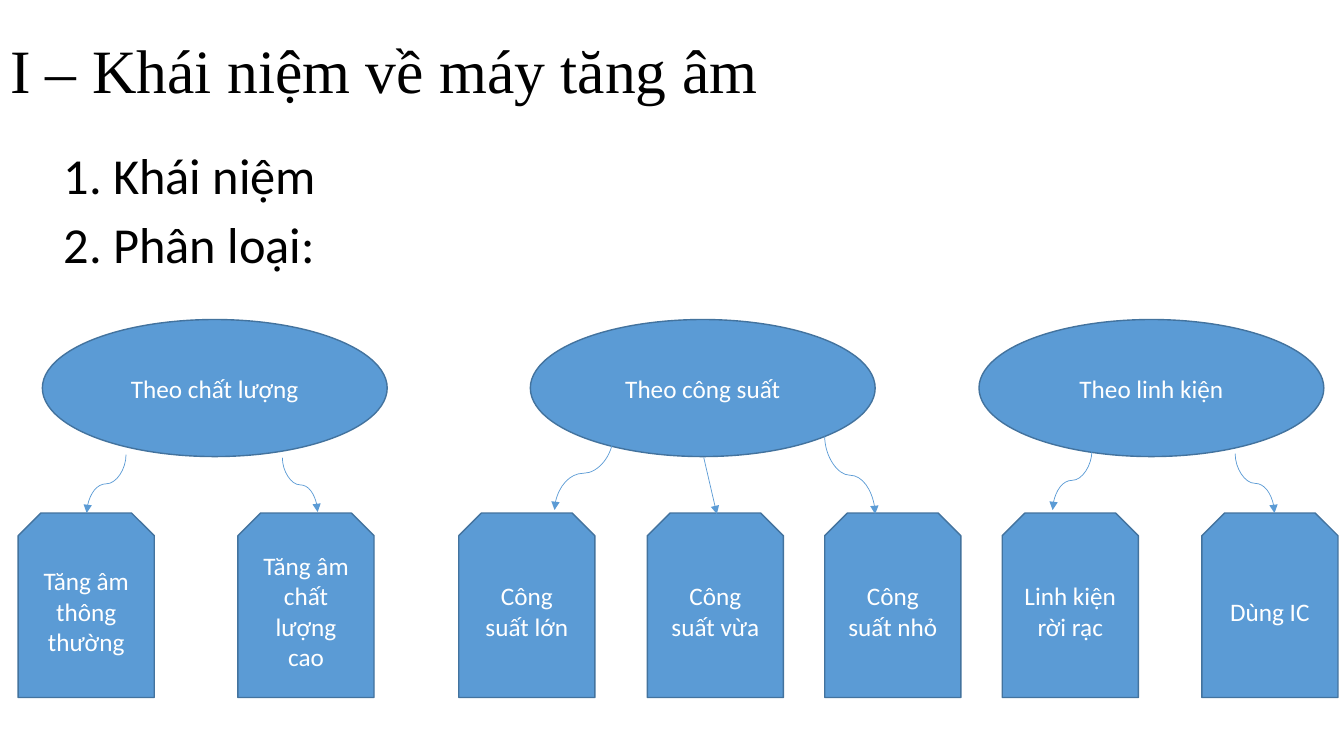
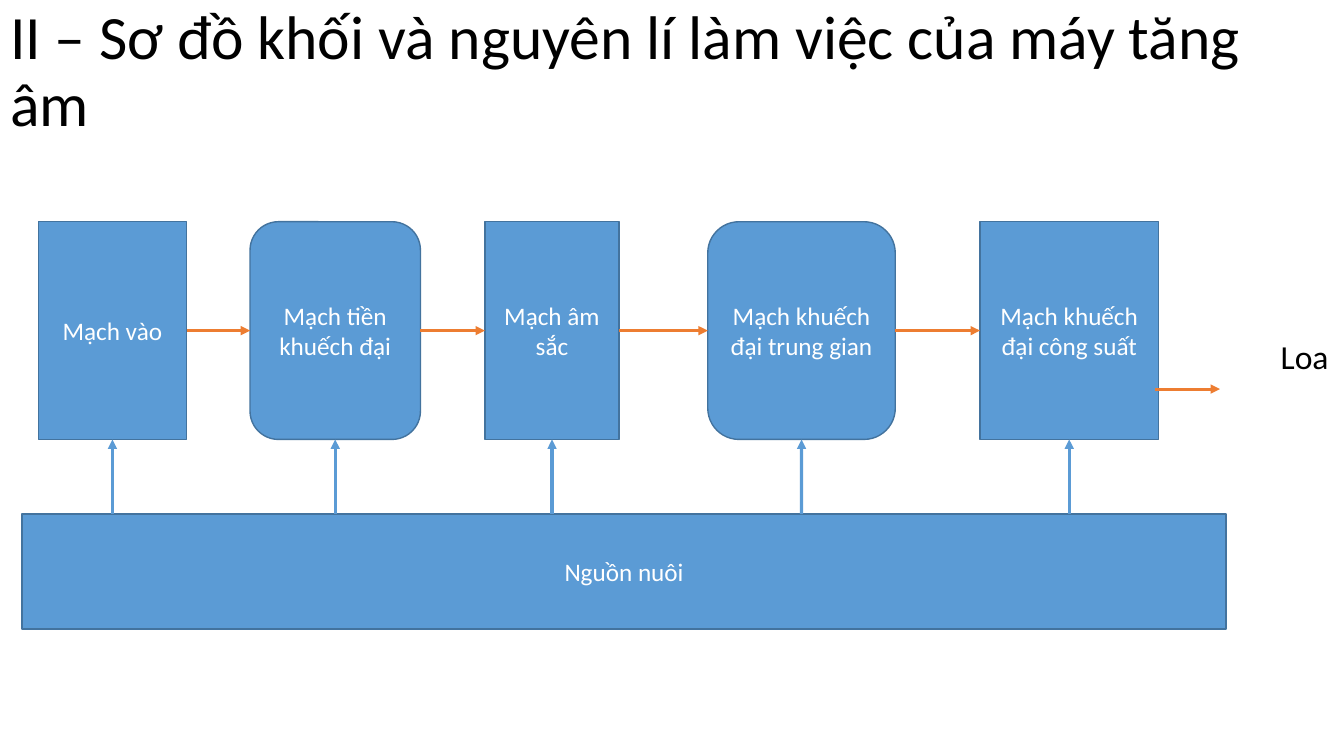
from lxml.etree import SubElement
from pptx import Presentation
from pptx.dml.color import RGBColor
from pptx.enum.shapes import MSO_CONNECTOR as LINK, MSO_SHAPE as SHAPE
from pptx.enum.text import MSO_ANCHOR as ANCHOR, MSO_AUTO_SIZE as AUTO, PP_ALIGN as ALIGN
from pptx.oxml.ns import qn
from pptx.util import Inches, Pt

WIDTH, HEIGHT = 13.33, 7.5
BLUE, EDGE, ORANGE, BLACK, WHITE = "5B9BD5", "43739E", "ED7D31", "000000", "FFFFFF"
SANS, SERIF = "Calibri", "Times New Roman"

KINDS_TITLE = "I – Khái niệm về máy tăng âm"
KINDS_LIST = ["1. Khái niệm", "2. Phân loại:"]
TOPIC_TOP, TOPIC_WIDTH, TOPIC_HEIGHT = 3.17, 3.42, 1.36
LEAF_TOP, LEAF_WIDTH, LEAF_HEIGHT = 5.09, 1.35, 1.83
TOPICS = [
    ("Theo chất lượng", 0.42, [
        ("Tăng âm thông thường", 0.18, (1.25, 4.51), (0.86, 5.09)),
        ("Tăng âm chất lượng cao", 2.36, (2.8, 4.54), (3.15, 5.08))]),
    ("Theo công suất", 5.26, [
        ("Công suất lớn", 4.55, (6.08, 4.33), (5.5, 5.06)),
        ("Công suất vừa", 6.42, (6.98, 4.54), (7.11, 5.1)),
        ("Công suất nhỏ", 8.18, (8.18, 4.33), (8.68, 5.1))]),
    ("Theo linh kiện", 9.71, [
        ("Linh kiện rời rạc", 9.94, (10.83, 4.47), (10.44, 5.06)),
        ("Dùng IC", 11.92, (12.25, 4.5), (12.64, 5.09))]),
]
STRAIGHT_LEAF = "Công suất vừa"

CIRCUIT_TITLE = "II – Sơ đồ khối và nguyên lí làm việc của máy tăng âm"
STAGE_TOP, STAGE_HEIGHT = 2.2, 2.16
STAGES = [
    ("Mạch vào", SHAPE.RECTANGLE, 0.38, 1.47),
    ("Mạch tiền khuếch đại", SHAPE.ROUNDED_RECTANGLE, 2.48, 1.69),
    ("Mạch âm sắc", SHAPE.RECTANGLE, 4.81, 1.33),
    ("Mạch khuếch đại trung gian", SHAPE.ROUNDED_RECTANGLE, 7.02, 1.86),
    ("Mạch khuếch đại công suất", SHAPE.RECTANGLE, 9.72, 1.77),
]
SUPPLY, SUPPLY_TOP = "Nguồn nuôi", 5.1
SPEAKER = "Loa"


def color(value):
    return RGBColor.from_string(value)


def style(para, size, ink, font=SANS, align=ALIGN.LEFT):
    para.alignment = align
    para.font.size = Pt(size)
    para.font.name = font
    para.font.color.rgb = color(ink)


def place(shape, left, top, width, height):
    shape.left, shape.top = Inches(left), Inches(top)
    shape.width, shape.height = Inches(width), Inches(height)


def add_title(page, text, width, font=SANS):
    title = page.shapes.title
    place(title, 0, 0, width, 1.45)
    frame = title.text_frame
    frame.text = text
    frame.auto_size = AUTO.NONE
    frame.vertical_anchor = ANCHOR.MIDDLE
    frame.paragraphs[0].line_spacing = 0.9
    style(frame.paragraphs[0], 44, BLACK, font)


def add_list(page, items):
    body = page.placeholders[1]
    place(body, 0.42, 1.45, 11.5, 4.76)
    frame = body.text_frame
    frame.text = "\n".join(items)
    frame.auto_size = AUTO.NONE
    for index, para in enumerate(frame.paragraphs):
        properties = para._p.get_or_add_pPr()
        properties.set("marL", str(Inches(0.11)))
        properties.set("indent", "0")
        SubElement(properties, qn("a:buNone"))
        para.line_spacing = 0.9
        para.space_before = Pt(10 if index else 0)
        style(para, 36, BLACK)


def add_block(page, kind, text, left, top, width, height):
    block = page.shapes.add_shape(
        kind, Inches(left), Inches(top), Inches(width), Inches(height))
    block.shadow.inherit = False
    block.fill.solid()
    block.fill.fore_color.rgb = color(BLUE)
    block.line.color.rgb = color(EDGE)
    block.line.width = Pt(1)
    block.text_frame.text = text
    block.text_frame.word_wrap = True
    block.text_frame.vertical_anchor = ANCHOR.MIDDLE
    style(block.text_frame.paragraphs[0], 18, WHITE, align=ALIGN.CENTER)
    return block


def add_arrow(page, start, end, ink, weight, kind=LINK.STRAIGHT):
    arrow = page.shapes.add_connector(
        kind, *[Inches(value) for value in (*start, *end)])
    arrow.line.color.rgb = color(ink)
    arrow.line.width = Pt(weight)
    SubElement(arrow.line._get_or_add_ln(), qn("a:tailEnd"), type="triangle")
    SubElement(arrow._element.spPr, qn("a:effectLst"))
    return arrow


def add_curve(page, start, end):
    (x1, y1), (x2, y2) = start, end
    middle_x, middle_y = (x1 + x2) / 2, (y1 + y2) / 2
    side = 1 if x2 < x1 else -1
    reach, rise = side * (y2 - y1) / 2, abs(x2 - x1) / 2
    curve = add_arrow(page, (middle_x - reach, middle_y - rise),
                      (middle_x + reach, middle_y + rise), BLUE, 0.5, LINK.CURVE)
    angle = 90 if side == 1 else 270
    curve._element.spPr.find(qn("a:xfrm")).set("rot", str(angle * 60000))


def build_kinds(deck):
    page = deck.slides.add_slide(deck.slide_layouts[1])
    add_title(page, KINDS_TITLE, 11.5, SERIF)
    add_list(page, KINDS_LIST)
    for topic, topic_left, leaves in TOPICS:
        add_block(page, SHAPE.OVAL, topic, topic_left, TOPIC_TOP, TOPIC_WIDTH, TOPIC_HEIGHT)
        for leaf, left, start, end in leaves:
            add_block(page, SHAPE.SNIP_2_SAME_RECTANGLE, leaf,
                      left, LEAF_TOP, LEAF_WIDTH, LEAF_HEIGHT)
            if leaf == STRAIGHT_LEAF:
                add_arrow(page, start, end, BLUE, 0.5)
            else:
                add_curve(page, start, end)


def build_circuit(deck):
    page = deck.slides.add_slide(deck.slide_layouts[5])
    add_title(page, CIRCUIT_TITLE, WIDTH)
    add_block(page, SHAPE.RECTANGLE, SUPPLY, 0.22, SUPPLY_TOP, 11.94, 1.14)
    middle = STAGE_TOP + STAGE_HEIGHT / 2
    bottom = STAGE_TOP + STAGE_HEIGHT
    previous, previous_right = None, 0
    for text, kind, left, width in STAGES:
        stage = add_block(page, kind, text, left, STAGE_TOP, width, STAGE_HEIGHT)
        center = left + width / 2
        feed = add_arrow(page, (center, SUPPLY_TOP), (center, bottom), BLUE, 2.25)
        feed.end_connect(stage, 2)
        if previous:
            signal = add_arrow(page, (previous_right, middle), (left, middle), ORANGE, 2.25)
            signal.begin_connect(previous, 3)
            signal.end_connect(stage, 1)
        previous, previous_right = stage, left + width
    add_arrow(page, (11.46, 3.86), (12.1, 3.86), ORANGE, 2.25)
    label = page.shapes.add_textbox(Inches(12.54), Inches(middle), Inches(0.8), Inches(0.5))
    label.text_frame.word_wrap = True
    label.text_frame.text = SPEAKER
    style(label.text_frame.paragraphs[0], 24, BLACK, align=ALIGN.CENTER)


def main():
    deck = Presentation()
    deck.slide_width, deck.slide_height = Inches(WIDTH), Inches(HEIGHT)
    build_kinds(deck)
    build_circuit(deck)
    deck.save("out.pptx")


if __name__ == "__main__":
    main()
